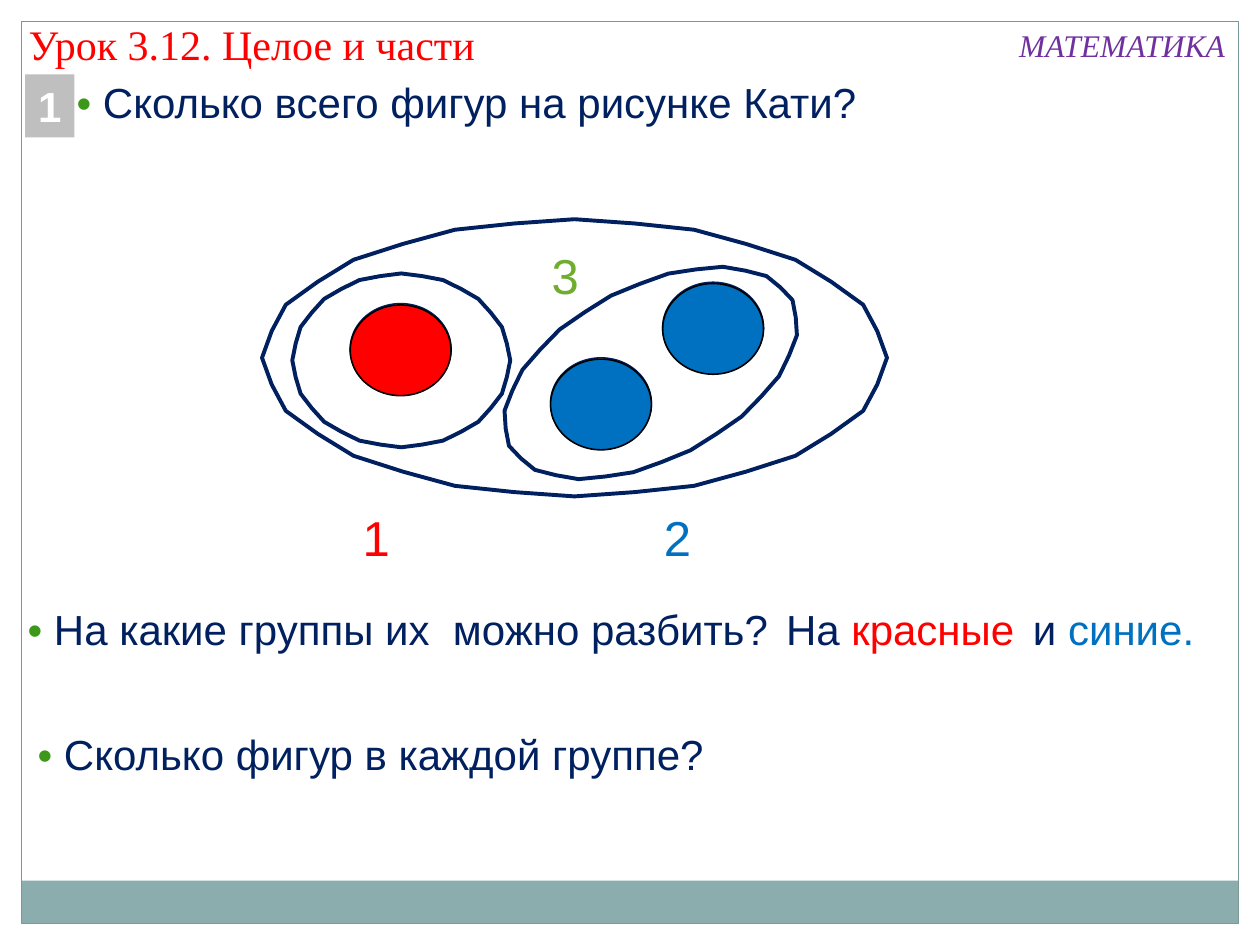
from pptx import Presentation
from pptx.dml.color import RGBColor
from pptx.enum.shapes import MSO_SHAPE as Preset
from pptx.enum.text import PP_ALIGN as Align
from pptx.util import Inches, Pt

NAVY, RED, BLUE = "002060", "FF0000", "0070C0"
GREEN, BULLET, PURPLE = "70AC2E", "3D9719", "7030A0"
SANS, SERIF = "Arial", "Times New Roman"


def color(value):
    return RGBColor.from_string(value)


def add_figure(slide, preset, box, fill=None, line=None, weight=0.9):
    shape = slide.shapes.add_shape(preset, *map(Inches, box))
    shape.shadow.inherit = False
    if fill:
        shape.fill.solid()
        shape.fill.fore_color.rgb = color(fill)
    else:
        shape.fill.background()
    if line:
        shape.line.color.rgb = color(line)
        shape.line.width = Pt(weight)
    else:
        shape.line.fill.background()
    return shape


def write(shape, parts, size=24, font=SANS, bold=False, italic=False, wrap=True):
    shape.text_frame.word_wrap = wrap
    paragraph = shape.text_frame.paragraphs[0]
    for text, shade in parts:
        run = paragraph.add_run()
        run.text = text
        run.font.name = font
        run.font.size = Pt(size)
        run.font.bold = bold
        run.font.italic = italic
        run.font.color.rgb = color(shade)
    return paragraph


def add_label(slide, box, parts, **style):
    write(slide.shapes.add_textbox(*map(Inches, box)), parts, **style)


def add_loop(slide, box, rotation=0):
    loop = add_figure(slide, Preset.STAR_16_POINT, box, line=NAVY, weight=2.25)
    loop.adjustments[0] = 0.494
    loop.rotation = rotation


def add_frame(slide, left, top, width, height):
    bar = 0.34
    add_figure(slide, Preset.RECTANGLE, (left, top + height - bar, width, bar), fill="8CADAE")
    add_figure(slide, Preset.RECTANGLE, (left, top, width, height), line="7C999A", weight=0.75)


def add_header(slide, left, top, width):
    add_label(slide, (left, top, 4.04, 0.5), [("Урок 3.12. Целое и части", RED)], font=SERIF)
    add_label(slide, (left + width - 1.85, top + 0.06, 1.85, 0.4), [("МАТЕМАТИКА", PURPLE)],
              size=18, font=SERIF, italic=True, wrap=False)


def add_diagram(slide, left, top, width, height):
    circles = [(0.7, 0.68, RED), (2.29, 1.11, BLUE), (3.18, 0.51, BLUE)]
    for x, y, fill in circles:
        box = (left + x, top + y - 0.01, 0.8, 0.72)
        add_figure(slide, Preset.OVAL, box, line=NAVY)
    add_loop(slide, (left, top, width, height))
    for x, y, fill in circles:
        box = (left + x, top + y, 0.8, 0.72)
        add_figure(slide, Preset.OVAL, box, fill=fill, line="000000")
    add_loop(slide, (left + 0.24, top + 0.43, 1.73, 1.38))
    add_loop(slide, (left + 1.82, top + 0.53, 2.53, 1.38), rotation=332.8)
    for x, y, digit, shade in [(2.2, 0.16, "3", GREEN), (0.7, 2.24, "1", RED), (3.09, 2.24, "2", BLUE)]:
        add_label(slide, (left + x, top + y, 0.48, 0.57), [(digit, shade)], size=28)


def add_questions(slide):
    questions = [
        (0.51, 0.56, 6.66, "Сколько всего фигур на рисунке Кати?"),
        (0.12, 4.74, 6.41, "На какие группы их  можно разбить?"),
        (0.2, 5.73, 5.71, "Сколько фигур в каждой группе?"),
    ]
    for left, top, width, question in questions:
        add_label(slide, (left, top, width, 0.5), [("• ", BULLET), (question, NAVY)])
    add_label(slide, (6.14, 4.74, 2.13, 0.5), [("На ", NAVY), ("красные", RED)], wrap=False)
    add_label(slide, (8.1, 4.74, 1.63, 0.5), [("и ", NAVY), ("синие.", BLUE)])


def add_badge(slide, box, number):
    badge = add_figure(slide, Preset.RECTANGLE, box, fill="BFBFBF")
    paragraph = write(badge, [(number, "FFFFFF")], bold=True, wrap=False)
    paragraph.alignment = Align.CENTER


def main():
    presentation = Presentation()
    presentation.slide_width = Inches(10)
    presentation.slide_height = Inches(7.5)
    slide = presentation.slides.add_slide(presentation.slide_layouts[6])
    add_frame(slide, 0.17, 0.17, 9.66, 7.16)
    add_header(slide, 0.13, 0.1, 9.71)
    add_diagram(slide, 2.08, 1.74, 4.96, 2.2)
    add_questions(slide)
    add_badge(slide, (0.2, 0.59, 0.39, 0.5), "1")
    presentation.save("out.pptx")


if __name__ == "__main__":
    main()
